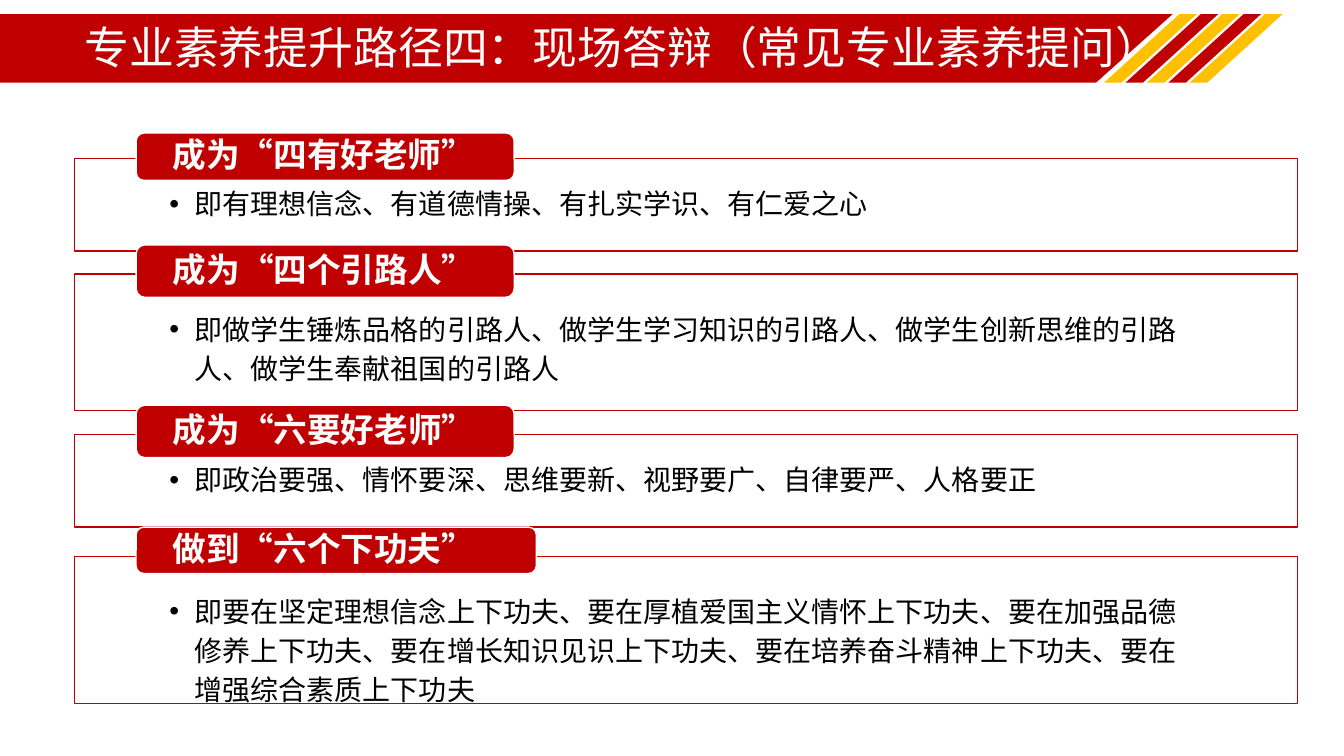
from lxml.etree import SubElement
from pptx import Presentation
from pptx.dml.color import RGBColor
from pptx.enum.shapes import MSO_SHAPE
from pptx.enum.text import MSO_ANCHOR, PP_ALIGN
from pptx.oxml.ns import qn
from pptx.util import Inches, Pt

RED, GOLD, WHITE, BLACK = "C00000", "FFC000", "FFFFFF", "000000"
HEAD_FONT, BODY_FONT, TITLE_FONT = "Noto Sans CJK JP", "Noto Sans CJK SC", "Roboto"

# Card top, card height, tag top, tag width, tag height, line spacing, heading, body
SECTIONS = [
    (1.57, 0.92, 1.32, 3.75, 0.47, 0.9, "成为“四有好老师”",
     "即有理想信念、有道德情操、有扎实学识、有仁爱之心"),
    (2.72, 1.35, 2.43, 3.75, 0.52, Pt(28), "成为“四个引路人”",
     "即做学生锤炼品格的引路人、做学生学习知识的引路人、"
     "做学生创新思维的引路人、做学生奉献祖国的引路人"),
    (4.31, 0.92, 4.02, 3.75, 0.52, 0.9, "成为“六要好老师”",
     "即政治要强、情怀要深、思维要新、视野要广、自律要严、人格要正"),
    (5.52, 1.46, 5.23, 3.97, 0.46, Pt(28), "做到“六个下功夫”",
     "即要在坚定理想信念上下功夫、要在厚植爱国主义情怀上下功夫、"
     "要在加强品德修养上下功夫、要在增长知识见识上下功夫、"
     "要在培养奋斗精神上下功夫、要在增强综合素质上下功夫"),
]


def rgb(color):
    return RGBColor.from_string(color)


def add_box(s, kind, x, y, w, h, fill, line=None):
    sp = s.shapes.add_shape(kind, Inches(x), Inches(y), Inches(w), Inches(h))
    sp.shadow.inherit = False
    sp.fill.solid()
    sp.fill.fore_color.rgb = rgb(fill)
    if line:
        sp.line.color.rgb = rgb(line)
        sp.line.width = Pt(1)
    else:
        sp.line.fill.background()
    return sp


def add_bullet(p):
    pPr = p._p.get_or_add_pPr()
    pPr.set("marL", str(Inches(0.25)))
    pPr.set("indent", str(-Inches(0.25)))
    SubElement(pPr, qn("a:buFont"), typeface="Arial")
    SubElement(pPr, qn("a:buChar"), char="•")


def set_text(sp, text, size, font, color, margins, anchor,
             bold=False, bullet=False, spacing=0.9, ea_font=None):
    tf = sp.text_frame
    tf.word_wrap = True
    tf.vertical_anchor = anchor
    tf.margin_left = tf.margin_right = Inches(margins[0])
    tf.margin_top, tf.margin_bottom = Inches(margins[1]), Inches(margins[2])
    tf.text = text
    p = tf.paragraphs[0]
    p.alignment = PP_ALIGN.LEFT
    p.line_spacing = spacing
    if bullet:
        add_bullet(p)
    r = p.runs[0]
    r.font.size = Pt(size)
    r.font.name = font
    r.font.bold = bold
    r.font.color.rgb = rgb(color)
    SubElement(r._r.get_or_add_rPr(), qn("a:ea"), typeface=ea_font or font)


def add_header(s, x, y, w, h):
    # Red band, then alternating slanted stripes at its right end
    band = add_box(s, MSO_SHAPE.PARALLELOGRAM, x, y, w, h, RED)
    band.adjustments[0] = 1.117
    for i in range(5):
        stripe = add_box(s, MSO_SHAPE.PARALLELOGRAM, x + w - 0.68 + 0.2125 * i, y,
                         0.92, h, RED if i % 2 else GOLD)
        stripe.adjustments[0] = 1.098
    # Title over the band
    title = s.shapes.add_textbox(Inches(0.74), Inches(y + 0.07), Inches(11.5), Inches(0.57))
    set_text(title, "专业素养提升路径四：现场答辩（常见专业素养提问）", 32, TITLE_FONT,
             WHITE, (0.1, 0.05, 0.05), MSO_ANCHOR.MIDDLE, ea_font=BODY_FONT)


def add_section(s, x, w, section):
    top, height, tag_top, tag_w, tag_h, spacing, heading, body = section
    # Outlined card with the bullet text
    card = add_box(s, MSO_SHAPE.RECTANGLE, x, top, w, height, WHITE, RED)
    set_text(card, body, 20, BODY_FONT, BLACK, (0.94, 0.32, 0.16), MSO_ANCHOR.TOP,
             bullet=True, spacing=spacing)
    # Heading tag across the card's top edge
    tag = add_box(s, MSO_SHAPE.ROUNDED_RECTANGLE, x + 0.61, tag_top, tag_w, tag_h, RED, WHITE)
    set_text(tag, heading, 24, HEAD_FONT, WHITE, (0.34, 0.02, 0.02), MSO_ANCHOR.MIDDLE,
             bold=True)


def main():
    prs = Presentation()
    prs.slide_width, prs.slide_height = Inches(13.33), Inches(7.5)
    s = prs.slides.add_slide(prs.slide_layouts[6])
    add_header(s, -0.91, 0.14, 12.54, 0.68)
    for section in SECTIONS:
        add_section(s, 0.74, 12.13, section)
    prs.save("out.pptx")


if __name__ == "__main__":
    main()
